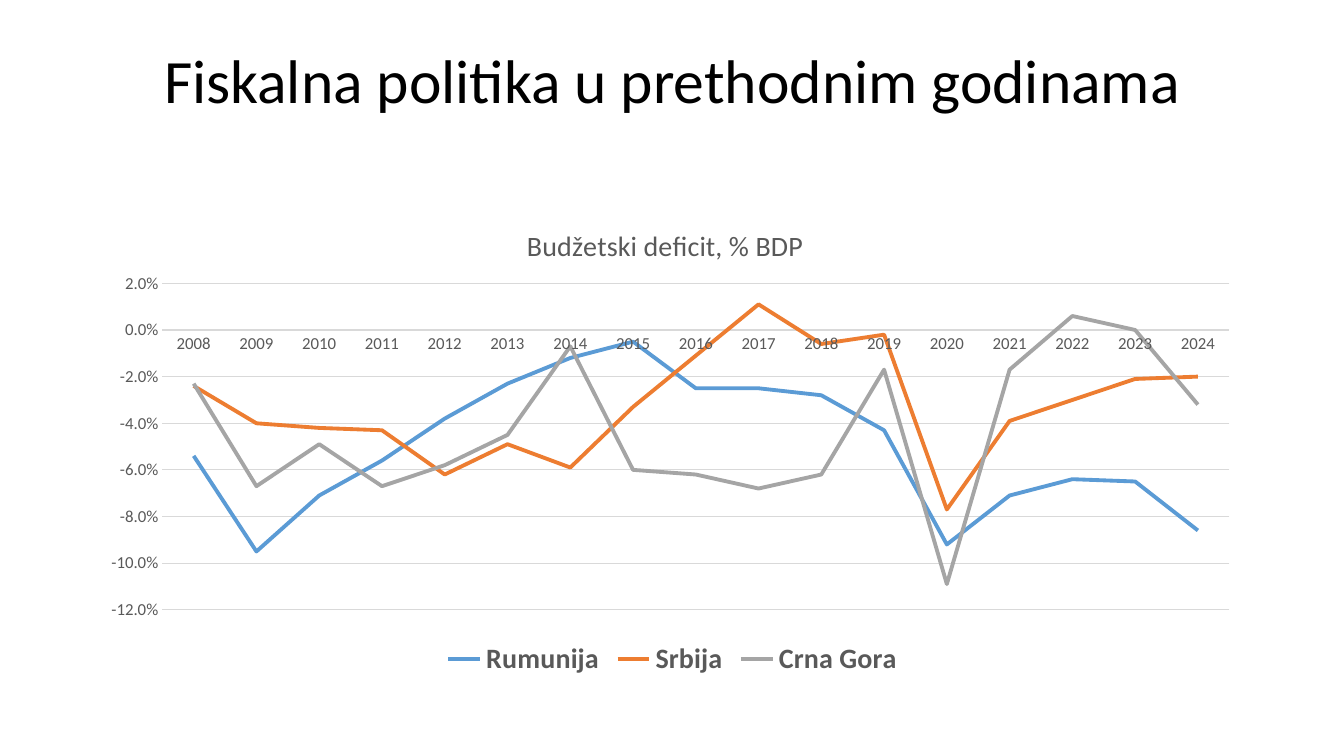
from dataclasses import dataclass

from lxml import etree
from pptx import Presentation
from pptx import util as u
from pptx.chart.data import CategoryChartData
from pptx.dml.color import RGBColor
from pptx.enum import chart as ce
from pptx.enum import text
from pptx.oxml import parse_xml
from pptx.oxml.ns import nsdecls

BLACK = RGBColor(0x00, 0x00, 0x00)
GRAY_TEXT = RGBColor(0x59, 0x59, 0x59)
GRID_GRAY = RGBColor(0xD9, 0xD9, 0xD9)
BLUE = RGBColor(0x5B, 0x9B, 0xD5)
ORANGE = RGBColor(0xED, 0x7D, 0x31)
SILVER = RGBColor(0xA5, 0xA5, 0xA5)
FONT = "Calibri"
WIDTH, HEIGHT = u.Inches(13.33), u.Inches(7.5)
YEARS = [str(year) for year in range(2008, 2025)]


@dataclass(frozen=True)
class Area:
    left: float
    top: float
    width: float
    height: float

    def lengths(self) -> tuple[int, int, int, int]:
        return (int(self.left * WIDTH), int(self.top * HEIGHT),
                int(self.width * WIDTH), int(self.height * HEIGHT))


@dataclass(frozen=True)
class Country:
    name: str
    color: RGBColor
    percents: tuple[float, ...]


TITLE_AREA = Area(0.069, 0.053, 0.863, 0.115)
CHART_AREA = Area(0.069, 0.267, 0.863, 0.635)
COUNTRIES = (
    Country("Rumunija", BLUE, (-5.4, -9.5, -7.1, -5.6, -3.8, -2.3, -1.2, -0.5, -2.5,
                               -2.5, -2.8, -4.3, -9.2, -7.1, -6.4, -6.5, -8.6)),
    Country("Srbija", ORANGE, (-2.4, -4.0, -4.2, -4.3, -6.2, -4.9, -5.9, -3.3, -1.1,
                               1.1, -0.6, -0.2, -7.7, -3.9, -3.0, -2.1, -2.0)),
    Country("Crna Gora", SILVER, (-2.3, -6.7, -4.9, -6.7, -5.8, -4.5, -0.7, -6.0, -6.2,
                                  -6.8, -6.2, -1.7, -10.9, -1.7, 0.6, 0, -3.2)),
)


def style_font(font, size: float, color: RGBColor, bold: bool = False) -> None:
    font.name = FONT
    font.size = u.Pt(size)
    font.bold = bold
    font.color.rgb = color


def style_line(line, color: RGBColor, points: float) -> None:
    line.color.rgb = color
    line.width = u.Pt(points)


def make_layout(target: str = "", **shares: float) -> etree._Element:
    inner = f'<c:layoutTarget val="{target}"/>' if target else ""
    modes = "".join(f'<c:{key}Mode val="edge"/>' for key in ("x", "y"))
    values = "".join(f'<c:{key} val="{share}"/>' for key, share in shares.items())
    return parse_xml(f'<c:layout {nsdecls("c")}><c:manualLayout>{inner}{modes}{values}'
                     '</c:manualLayout></c:layout>')


def set_layout(parent: etree._Element, layout: etree._Element, position: int) -> None:
    for old in parent.findall(layout.tag):
        parent.remove(old)
    parent.insert(position, layout)


def add_title(slide) -> None:
    box = slide.shapes.add_textbox(*TITLE_AREA.lengths())
    frame = box.text_frame
    frame.word_wrap = True
    frame.vertical_anchor = text.MSO_ANCHOR.MIDDLE
    frame.text = "Fiskalna politika u prethodnim godinama"
    paragraph = frame.paragraphs[0]
    paragraph.alignment = text.PP_ALIGN.CENTER
    paragraph.line_spacing = 0.9
    style_font(paragraph.runs[0].font, 44, BLACK)


def style_axes(chart) -> None:
    for axis in (chart.category_axis, chart.value_axis):
        axis.major_tick_mark = axis.minor_tick_mark = ce.XL_TICK_MARK.NONE
        style_font(axis.tick_labels.font, 12, GRAY_TEXT)
    style_line(chart.category_axis.format.line, GRID_GRAY, 1)
    values = chart.value_axis
    values.minimum_scale, values.maximum_scale, values.major_unit = -0.12, 0.02, 0.02
    values.format.line.fill.background()
    values.has_major_gridlines = True
    style_line(values.major_gridlines.format.line, GRID_GRAY, 0.75)
    values.tick_labels.number_format = "0.0%"
    values.tick_labels.number_format_is_linked = False


def add_deficit_chart(slide) -> None:
    data = CategoryChartData(number_format="0.0%")
    data.categories = YEARS
    for country in COUNTRIES:
        data.add_series(country.name, [round(value / 100, 3) for value in country.percents])
    chart = slide.shapes.add_chart(ce.XL_CHART_TYPE.LINE, *CHART_AREA.lengths(), data).chart
    style_font(chart.font, 10, BLACK)

    chart.has_title = True
    title = chart.chart_title
    title.include_in_layout = False
    title.text_frame.text = "Budžetski deficit, % BDP"
    style_font(title.text_frame.paragraphs[0].runs[0].font, 20, GRAY_TEXT)
    set_layout(title._element, make_layout(x=0.37, y=0.04), 1)

    chart.has_legend = True
    chart.legend.position = ce.XL_LEGEND_POSITION.BOTTOM
    chart.legend.include_in_layout = False
    style_font(chart.legend.font, 20, GRAY_TEXT, bold=True)

    style_axes(chart)
    plot = chart.plots[0]
    plot.vary_by_categories = False
    for series, country in zip(plot.series, COUNTRIES):
        series.smooth = False
        series.marker.style = ce.XL_MARKER_STYLE.NONE
        style_line(series.format.line, country.color, 2.75)
    plot_area = plot._element.getparent()
    set_layout(plot_area, make_layout("inner", x=0.06, y=0.17, w=0.92, h=0.68), 0)


def main() -> None:
    presentation = Presentation()
    presentation.slide_width, presentation.slide_height = WIDTH, HEIGHT
    slide = presentation.slides.add_slide(presentation.slide_layouts[6])
    add_title(slide)
    add_deficit_chart(slide)
    presentation.save("out.pptx")


if __name__ == "__main__":
    main()
